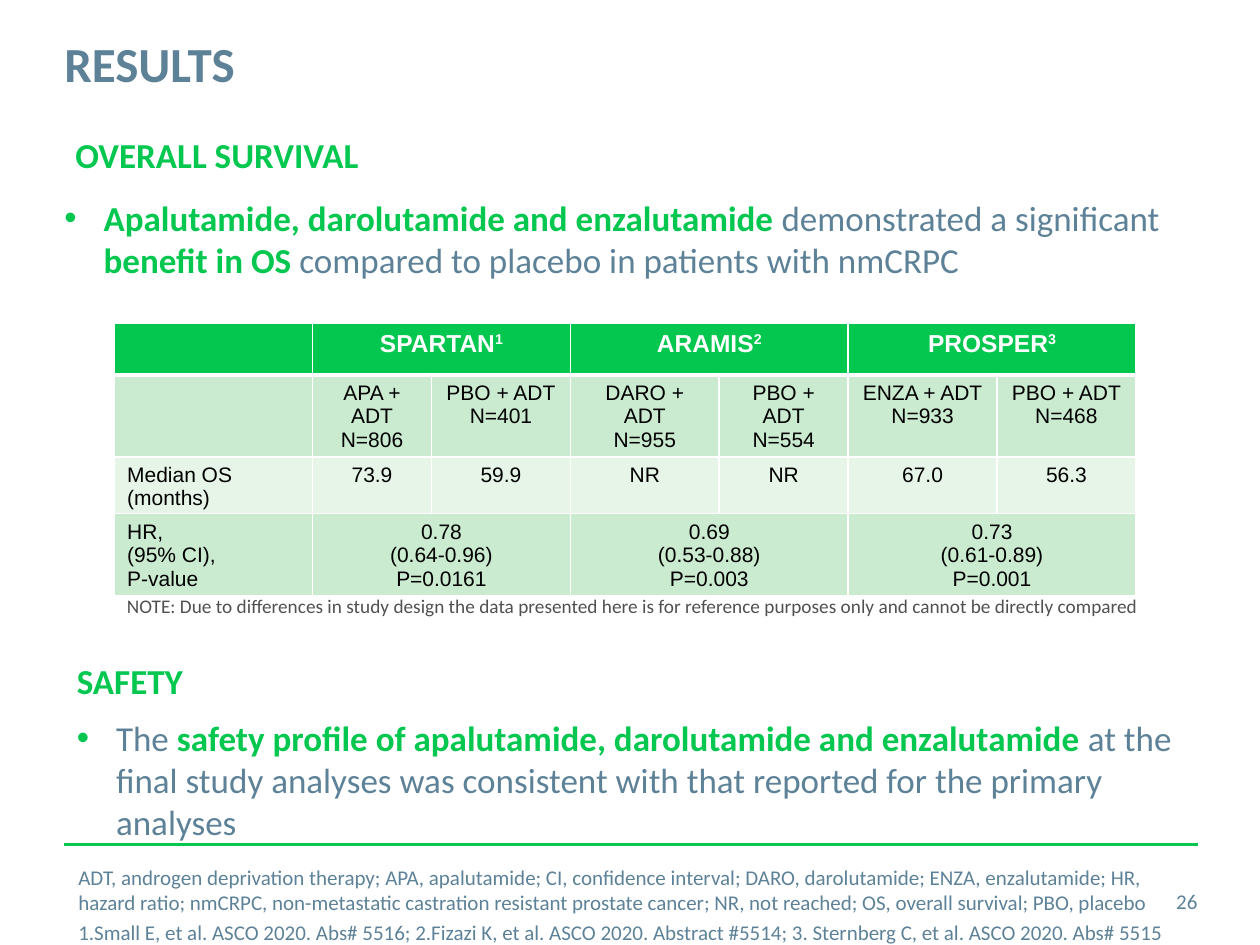
from lxml import etree
from pptx import Presentation
from pptx.dml.color import RGBColor
from pptx.enum.shapes import MSO_CONNECTOR
from pptx.enum.text import MSO_ANCHOR, PP_ALIGN
from pptx.oxml.ns import qn
from pptx.util import Cm, Pt

LEFT, CENTER, RIGHT = PP_ALIGN.LEFT, PP_ALIGN.CENTER, PP_ALIGN.RIGHT
TOP, MIDDLE = MSO_ANCHOR.TOP, MSO_ANCHOR.MIDDLE
STRAIGHT = MSO_CONNECTOR.STRAIGHT

GREEN, BLUE, GREY = "03C74F", "5D8298", "505050"
WHITE, BLACK = "FFFFFF", "000000"
DARK_BAND, LIGHT_BAND = "CAEBCF", "E6F5E8"

COLUMN_WIDTHS = [3.99, 2.4, 2.8, 3, 2.6, 3, 2.8]
ROW_HEIGHT = 1.04
TRIALS = [("SPARTAN", "1"), ("ARAMIS", "2"), ("PROSPER", "3")]
ARMS = ["", "APA + ADT\nN=806", "PBO + ADT\nN=401", "DARO + ADT\nN=955",
        "PBO + ADT\nN=554", "ENZA + ADT\nN=933", "PBO + ADT\nN=468"]
MEDIANS = ["Median OS (months)", "73.9", "59.9", "NR", "NR", "67.0", "56.3"]
HAZARD_RATIOS = ["HR,\n(95% CI),\nP-value", "0.78\n(0.64-0.96)\nP=0.0161", "",
                 "0.69\n(0.53-0.88)\nP=0.003", "", "0.73\n(0.61-0.89)\nP=0.001", ""]
ABBREVIATIONS = (
    "ADT, androgen deprivation therapy; APA, apalutamide; CI, confidence interval; "
    "DARO, darolutamide; ENZA, enzalutamide; HR, hazard ratio; nmCRPC, non-metastatic "
    "castration resistant prostate cancer; NR, not reached; OS, overall survival; "
    "PBO, placebo")
REFERENCES = (
    "1.Small E, et al. ASCO 2020. Abs# 5516; 2.Fizazi K, et al. ASCO 2020. "
    "Abstract #5514; 3. Sternberg C, et al. ASCO 2020. Abs# 5515")
NOTE = ("NOTE: Due to differences in study design the data presented here is for "
        "reference purposes only and cannot be directly compared")


def color(value):
    """Turn a hex string into a colour."""
    return RGBColor.from_string(value)


def format_run(run, size, fill, bold=False, name="Calibri"):
    """Set the font of one run."""
    run.font.size = Pt(size)
    run.font.name = name
    run.font.bold = bold
    run.font.color.rgb = color(fill)


def add_text(slide, box, paragraphs, size, inset=(0.25, 0.13), align=LEFT, anchor=TOP):
    """Add a text box whose paragraphs are lists of (text, colour, bold)."""
    text_frame = slide.shapes.add_textbox(*map(Cm, box)).text_frame
    text_frame.word_wrap = True
    text_frame.vertical_anchor = anchor
    text_frame.margin_left = text_frame.margin_right = Cm(inset[0])
    text_frame.margin_top = text_frame.margin_bottom = Cm(inset[1])
    for index, parts in enumerate(paragraphs):
        paragraph = text_frame.add_paragraph() if index else text_frame.paragraphs[0]
        paragraph.alignment = align
        for text, fill, bold in parts:
            run = paragraph.add_run()
            run.text = text
            format_run(run, size, fill, bold)
    return text_frame


def add_bullet(paragraph):
    """Give a paragraph a hanging green bullet."""
    properties = paragraph._p.get_or_add_pPr()
    properties.set("marL", str(Cm(0.79)))
    properties.set("indent", str(-Cm(0.79)))
    bullet_color = etree.SubElement(properties, qn("a:buClr"))
    etree.SubElement(bullet_color, qn("a:srgbClr"), val=GREEN)
    etree.SubElement(properties, qn("a:buFont"), typeface="Arial")
    etree.SubElement(properties, qn("a:buChar"), char="•")


def add_heading(slide, box, text):
    """Add a green section heading."""
    add_text(slide, box, [[(text, GREEN, True)]], 20)


def add_statement(slide, box, parts, inset=(0.25, 0.13)):
    """Add one bulleted statement."""
    text_frame = add_text(slide, box, [parts], 20, inset)
    add_bullet(text_frame.paragraphs[0])


def style_cell(cell, fill, top, bottom):
    """Set the white borders, the fill and the bottom margin of a cell."""
    properties = cell._tc.get_or_add_tcPr()
    for side, width in (("L", 1), ("R", 1), ("T", top), ("B", bottom)):
        line = etree.SubElement(properties, qn(f"a:ln{side}"), w=str(Pt(width)))
        solid = etree.SubElement(line, qn("a:solidFill"))
        etree.SubElement(solid, qn("a:srgbClr"), val=WHITE)
    cell.fill.solid()
    cell.fill.fore_color.rgb = color(fill)
    cell.margin_bottom = Cm(0)


def fill_header(table):
    """Write the trial names with their reference numbers."""
    for index, (trial, reference) in enumerate(TRIALS):
        paragraph = table.cell(0, 1 + 2 * index).text_frame.paragraphs[0]
        paragraph.alignment = CENTER
        for text in (trial, reference):
            run = paragraph.add_run()
            run.text = text
            format_run(run, 14, WHITE, True, "Arial")
        run._r.get_or_add_rPr().set("baseline", "30000")


def fill_body(table):
    """Write the arms, medians and hazard ratios."""
    for row, texts in enumerate((ARMS, MEDIANS, HAZARD_RATIOS), start=1):
        for column, text in enumerate(texts):
            if not text:
                continue
            text_frame = table.cell(row, column).text_frame
            text_frame.text = text
            for paragraph in text_frame.paragraphs:
                paragraph.alignment = CENTER if column else LEFT
                for run in paragraph.runs:
                    format_run(run, 12, BLACK, name="Arial")


def add_survival_table(slide, left, top):
    """Add the overall survival table."""
    fills = [GREEN, DARK_BAND, LIGHT_BAND, DARK_BAND]
    rows, columns = len(fills), len(COLUMN_WIDTHS)
    table = slide.shapes.add_table(
        rows, columns, Cm(left), Cm(top),
        Cm(sum(COLUMN_WIDTHS)), Cm(rows * ROW_HEIGHT)).table
    table.first_row = table.horz_banding = False
    for column, width in zip(table.columns, COLUMN_WIDTHS):
        column.width = Cm(width)
    for index, fill in enumerate(fills):
        table.rows[index].height = Cm(ROW_HEIGHT)
        for column in range(columns):
            style_cell(table.cell(index, column), fill,
                       3 if index == 1 else 1, 3 if index == 0 else 1)
    for row in (0, rows - 1):
        for column in range(1, columns, 2):
            table.cell(row, column).merge(table.cell(row, column + 1))
    fill_header(table)
    fill_body(table)


def add_footer(slide, left, top, width):
    """Add the rule, the abbreviations, the references and the page number."""
    rule = slide.shapes.add_connector(
        STRAIGHT, Cm(left), Cm(top), Cm(left + width), Cm(top))
    rule.line.color.rgb = color(GREEN)
    rule.line.width = Pt(2)
    etree.SubElement(rule._element.spPr, qn("a:effectLst"))
    add_text(slide, (left + width - 2.26, top + 0.63, 2.24, 1.02),
             [[("26", BLUE, False)]], 12, (0, 0), RIGHT, MIDDLE)
    text_frame = add_text(
        slide, (left + 0.03, top + 0.27, 22.6, 1.75),
        [[(ABBREVIATIONS, BLUE, False)], [(REFERENCES, BLUE, False)]], 12)
    text_frame.paragraphs[1].space_before = Pt(3)


def main():
    """Build and save the results slide."""
    presentation = Presentation()
    presentation.slide_width, presentation.slide_height = Cm(25.4), Cm(19.05)
    slide = presentation.slides.add_slide(presentation.slide_layouts[6])
    add_footer(slide, 1.3, 17.02, 22.86)
    add_survival_table(slide, 2.31, 6.52)
    add_text(slide, (1.3, 0.67, 18.21, 1.45), [[("RESULTS", BLUE, True)]], 28, (0, 0))
    add_heading(slide, (1.27, 2.57, 22.86, 1.17), "OVERALL SURVIVAL")
    add_statement(slide, (1.3, 3.96, 22.83, 2.24), [
        ("Apalutamide, darolutamide and enzalutamide ", GREEN, True),
        ("demonstrated a significant ", BLUE, False),
        ("benefit in OS ", GREEN, True),
        ("compared to placebo in patients with nmCRPC", BLUE, False)], (0, 0))
    add_text(slide, (2.31, 11.86, 21.11, 0.74), [[(NOTE, GREY, False)]], 11)
    add_heading(slide, (1.3, 13.16, 22.86, 1.17), "SAFETY")
    add_statement(slide, (1.3, 14.31, 22.83, 2.39), [
        ("The ", BLUE, False),
        ("safety profile of apalutamide, darolutamide and enzalutamide", GREEN, True),
        (" at the final study analyses was consistent with that reported for the "
         "primary analyses", BLUE, False)])
    presentation.save("out.pptx")


if __name__ == "__main__":
    main()
